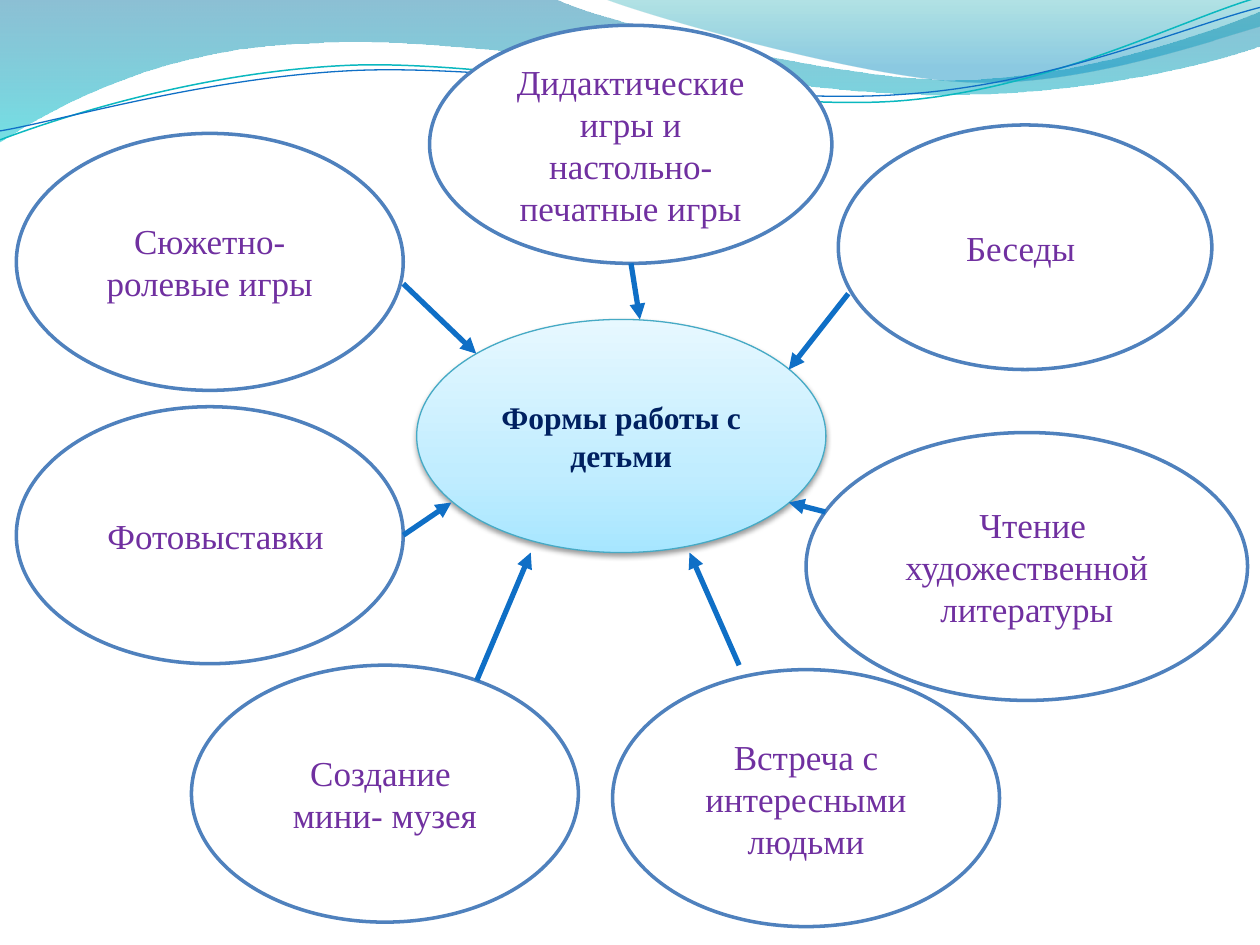
from lxml.etree import SubElement
from pptx import Presentation
from pptx.dml.color import RGBColor
from pptx.enum.shapes import MSO_CONNECTOR, MSO_SHAPE
from pptx.enum.text import MSO_ANCHOR, PP_ALIGN
from pptx.oxml.ns import qn
from pptx.util import Cm, Pt

WHITE = RGBColor(0xFF, 0xFF, 0xFF)
BLACK = RGBColor(0, 0, 0)
NAVY = RGBColor(0x00, 0x20, 0x60)
PURPLE = RGBColor(0x70, 0x30, 0xA0)
OUTLINE = RGBColor(0x4F, 0x81, 0xBD)
CENTER_LINE = RGBColor(0x46, 0xAA, 0xC5)
BLUE = RGBColor(0x0F, 0x6F, 0xC6)
TEAL = RGBColor(0x0A, 0xB8, 0xBF)

TEXT_FONT = "Times New Roman"
SPACE_FONT = "Comic Neue"

# Gradient stops: position %, colour, opacity %
CENTER_STOPS = [(0, RGBColor(0xA7, 0xE6, 0xFF), 100),
                (35, RGBColor(0xC1, 0xED, 0xFF), 100),
                (100, RGBColor(0xE7, 0xF8, 0xFF), 100)]
WIDE_STOPS = [(0, RGBColor(0x00, 0x74, 0xA1), 45), (100, RGBColor(0x00, 0xC6, 0xCF), 55)]
RIGHT_STOPS = [(0, RGBColor(0x00, 0xA1, 0xA9), 30), (80, RGBColor(0x00, 0x8B, 0xBF), 45)]

# All positions are in centimetres. An outline step is a point (2 numbers)
# or a Bezier curve (6 numbers: two control points and the end).
WAVE_BANDS = [
    ([(0, 0), (11.18, -0.03),
      (12.09, 0.43, 16.87, 1.6, 19.25, 1.6), (21.67, 1.6, 24.33, 0.66, 25.4, 0.23),
      (25.43, 0.91),
      (24.97, 1.12, 22.1, 1.93, 18.95, 1.91), (15.8, 1.91, 9.7, 0.71, 6.53, 0.86),
      (3.28, 0.91, 1.17, 2.11, -0.03, 2.87)], WIDE_STOPS),
    ([(12.17, -0.03),
      (12.93, 0.28, 17.32, 1.57, 19.53, 1.65), (21.74, 1.75, 24.41, 0.81, 25.4, 0.53),
      (25.4, 0)], RIGHT_STOPS),
]
WAVE_TILT = 357.3
WAVE_LINES = [
    ([(-0.05, 2.22), (1.19, 1.82, 4.02, 1.04, 7.05, 1.05),
      (10.05, 1.07, 15.02, 2.37, 18.08, 2.29),
      (21.13, 2.2, 23.87, 0.91, 25.41, 0.55)], TEAL, 0.85),
    ([(-0.04, 2.04), (1.16, 1.9, 4.18, 1.15, 7.2, 1.16),
      (10.22, 1.18, 15.13, 2.25, 18.19, 2.16),
      (21.21, 2.1, 23.93, 1.06, 25.45, 0.75)], BLUE, 0.75),
]

CENTER = ("Формы работы с детьми", (8.4, 6.44, 8.25, 4.7))
SIDE_SIZE = (7.8, 5.18)
ACTIVITIES = [
    ("Дидактические игры и настольно-печатные игры", (8.66, 0.51, 8.11, 4.8)),
    ("Беседы ", (16.9, 2.52, 7.53, 4.93)),
    (" Чтение художественной литературы", (16.25, 8.72, 8.9, 5.4)),
    ("Встреча с интересными людьми", (12.35, 13.5, *SIDE_SIZE)),
    ("Создание \nмини- музея", (3.86, 13.41, *SIDE_SIZE)),
    (" Фотовыставки", (0.33, 8.2, *SIDE_SIZE)),
    ("Сюжетно-ролевые игры", (0.33, 2.69, *SIDE_SIZE)),
]
ARROWS = [
    (12.72, 5.31, 12.9, 6.44),
    (17.1, 5.92, 15.9, 7.45),
    (16.64, 10.32, 15.9, 10.13),
    (14.9, 13.41, 13.9, 11.14),
    (9.61, 13.72, 10.7, 11.14),
    (8.13, 10.79, 9.1, 10.13),
    (8.13, 5.72, 9.6, 7.13),
]


def add_color(parent, color, opacity):
    element = SubElement(parent, qn("a:srgbClr"), val=str(color))
    if opacity < 100:
        SubElement(element, qn("a:alpha"), val=str(opacity * 1000))


def set_gradient(shape, stops, angle):
    """Fill with a linear gradient whose stops may be transparent."""
    shape.fill.solid()
    solid = shape._element.spPr.find(qn("a:solidFill"))
    gradient = solid.makeelement(qn("a:gradFill"), {"rotWithShape": "1"})
    stop_list = SubElement(gradient, qn("a:gsLst"))
    for position, color, opacity in stops:
        stop = SubElement(stop_list, qn("a:gs"), pos=str(position * 1000))
        add_color(stop, color, opacity)
    SubElement(gradient, qn("a:lin"), ang=str(angle * 60000), scaled="0")
    solid.getparent().replace(solid, gradient)


def set_line(shape, color, width):
    shape.line.color.rgb = color
    shape.line.width = Pt(width)


def add_wave(shapes, steps, close):
    """Build an outline from the step ends, then bend its segments into curves."""
    start, *ends = [(Cm(step[-2]), Cm(step[-1])) for step in steps]
    builder = shapes.build_freeform(*start)
    builder.add_line_segments(ends, close=close)
    wave = builder.convert_to_shape()
    wave.shadow.inherit = False
    segments = list(wave._element.iter(qn("a:lnTo")))
    for segment, step in zip(segments, steps[1:]):
        if len(step) == 6:
            curve = segment.makeelement(qn("a:cubicBezTo"), {})
            for x, y in zip(step[::2], step[1::2]):
                SubElement(curve, qn("a:pt"), x=str(Cm(x) - wave.left),
                           y=str(Cm(y) - wave.top))
            segment.getparent().replace(segment, curve)
    return wave


def write_text(shape, text, size, color, bold=False):
    frame = shape.text_frame
    frame.word_wrap = True
    frame.vertical_anchor = MSO_ANCHOR.MIDDLE
    for index, line in enumerate(text.split("\n")):
        para = frame.add_paragraph() if index else frame.paragraphs[0]
        para.alignment = PP_ALIGN.CENTER
        words = line.lstrip()
        lead = line[:len(line) - len(words)]
        for part, font_name in ((lead, SPACE_FONT), (words, TEXT_FONT)):
            if part:
                span = para.add_run()
                span.text = part
                span.font.name = font_name
                span.font.size = Pt(size)
                span.font.bold = bold
                span.font.color.rgb = color


def add_ellipse(slide, box):
    ellipse = slide.shapes.add_shape(MSO_SHAPE.OVAL, *map(Cm, box))
    ellipse.shadow.inherit = False
    return ellipse


def add_arrow(slide, ends):
    arrow = slide.shapes.add_connector(MSO_CONNECTOR.STRAIGHT, *map(Cm, ends))
    set_line(arrow, BLUE, 3)
    SubElement(arrow.line._get_or_add_ln(), qn("a:tailEnd"), type="triangle")
    SubElement(arrow._element.spPr, qn("a:effectLst"))


def main():
    deck = Presentation()
    deck.slide_width, deck.slide_height = Cm(25.4), Cm(19.05)
    slide = deck.slides.add_slide(deck.slide_layouts[6])

    for steps, stops in WAVE_BANDS:
        band = add_wave(slide.shapes, steps, close=True)
        set_gradient(band, stops, 90)
        band.line.fill.background()
    wave_group = slide.shapes.add_group_shape()
    for steps, color, width in WAVE_LINES:
        wave = add_wave(wave_group.shapes, steps, close=False)
        wave.rotation = WAVE_TILT
        wave.fill.background()
        set_line(wave, color, width)

    text, box = CENTER
    center = add_ellipse(slide, box)
    set_gradient(center, CENTER_STOPS, 270)
    set_line(center, CENTER_LINE, 0.75)
    effects = center._element.spPr.find(qn("a:effectLst"))
    shadow = SubElement(effects, qn("a:outerShdw"), blurRad=str(Pt(3.1)),
                        dist=str(Pt(1.6)), dir=str(90 * 60000), rotWithShape="0")
    add_color(shadow, BLACK, 38)
    write_text(center, text, size=18, color=NAVY, bold=True)

    for text, box in ACTIVITIES:
        ellipse = add_ellipse(slide, box)
        ellipse.fill.solid()
        ellipse.fill.fore_color.rgb = WHITE
        set_line(ellipse, OUTLINE, 2)
        write_text(ellipse, text, size=20, color=PURPLE)
    for ends in ARROWS:
        add_arrow(slide, ends)

    deck.save("out.pptx")


if __name__ == "__main__":
    main()
